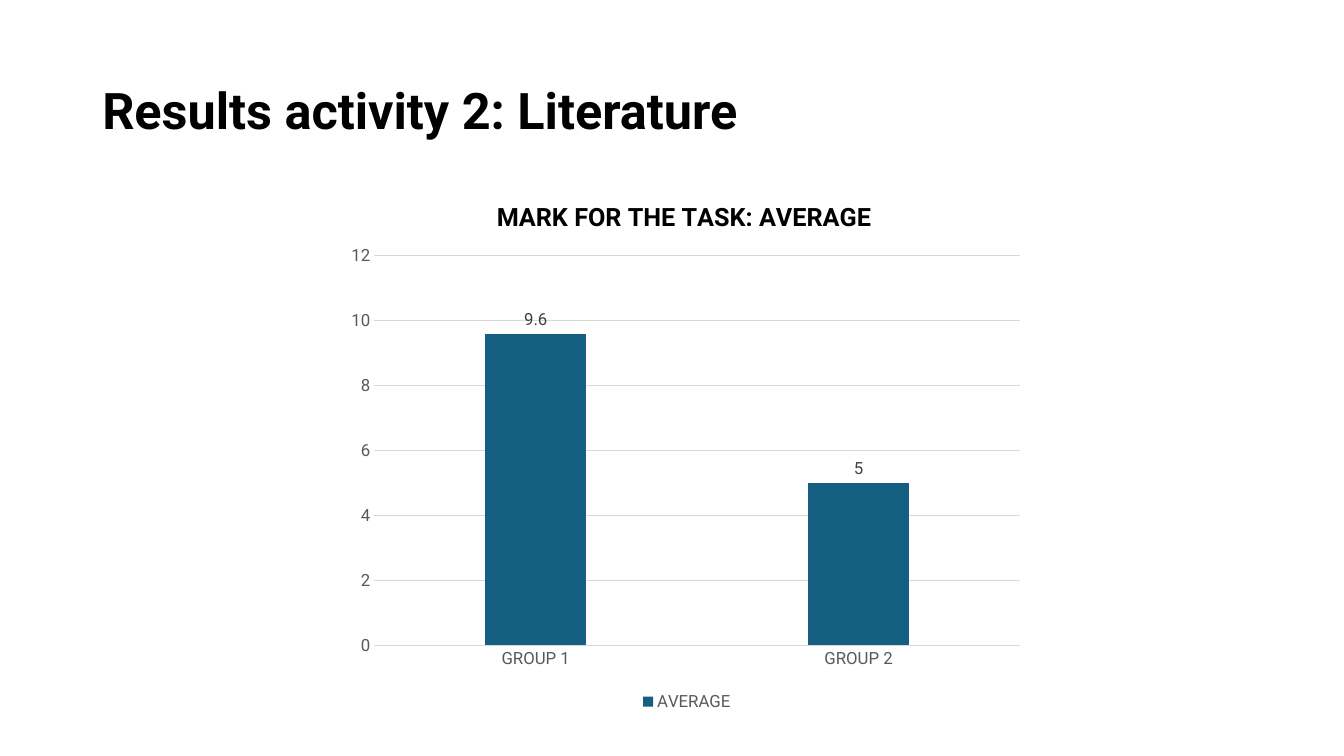
from dataclasses import dataclass
from lxml.etree import SubElement
from pptx import Presentation
from pptx.chart.data import CategoryChartData
from pptx.dml.color import RGBColor
from pptx.enum.chart import XL_CHART_TYPE, XL_LABEL_POSITION, XL_LEGEND_POSITION, XL_TICK_MARK
from pptx.enum.text import MSO_ANCHOR
from pptx.oxml.ns import qn
from pptx.util import Pt


@dataclass(frozen=True)
class Theme:
    font: str = "Roboto"
    ink: str = "000000"
    muted: str = "595959"
    label: str = "404040"
    grid: str = "D9D9D9"
    bar: str = "156082"
    title_size: float = 36
    chart_title_size: float = 18
    chart_size: float = 12


class Deck:
    def __init__(self, theme):
        self.t = theme
        self.prs = Presentation()
        self.prs.slide_width, self.prs.slide_height = Pt(960), Pt(540)
        self.s = self.prs.slides.add_slide(self.prs.slide_layouts[6])

    def style(self, font, size, color, bold=False):
        font.name, font.size, font.bold = self.t.font, Pt(size), bold
        font.color.rgb = RGBColor.from_string(color)

    def line(self, line):
        line.color.rgb = RGBColor.from_string(self.t.grid)
        line.width = Pt(0.75)

    def layout(self, element, **values):
        layout = element.find(qn("c:layout"))
        if layout is None:
            layout = SubElement(element, qn("c:layout"))
            tx = element.find(qn("c:tx"))
            element.insert(0 if tx is None else element.index(tx) + 1, layout)
        manual = SubElement(layout, qn("c:manualLayout"))
        if "w" in values:
            SubElement(manual, qn("c:layoutTarget")).set("val", "inner")
        for axis in "xy":
            SubElement(manual, qn(f"c:{axis}Mode")).set("val", "edge")
        for name, value in values.items():
            SubElement(manual, qn(f"c:{name}")).set("val", str(value))

    def title(self, text, x, y, w, h):
        tf = self.s.shapes.add_textbox(Pt(x), Pt(y), Pt(w), Pt(h)).text_frame
        tf.word_wrap = True
        tf.vertical_anchor = MSO_ANCHOR.MIDDLE
        p = tf.paragraphs[0]
        p.line_spacing = 0.9
        r = p.add_run()
        r.text = text
        self.style(r.font, self.t.title_size, self.t.ink, True)

    def columns(self, title, name, values, x, y, w, h):
        t = self.t
        data = CategoryChartData()
        data.categories = list(values)
        data.add_series(name, list(values.values()))
        frame = self.s.shapes.add_chart(
            XL_CHART_TYPE.COLUMN_CLUSTERED, Pt(x), Pt(y), Pt(w), Pt(h), data)
        chart = frame.chart
        self.style(chart.font, t.chart_size, t.muted)

        chart.has_title = True
        r = chart.chart_title.text_frame.paragraphs[0].add_run()
        r.text = title
        self.style(r.font, t.chart_title_size, t.ink, True)
        chart_xml = chart.element.find(qn("c:chart"))
        self.layout(chart_xml.find(qn("c:title")), x=0.22, y=0.04)
        self.layout(chart_xml.find(qn("c:plotArea")), x=0.05, y=0.15, w=0.93, h=0.72)

        chart.has_legend = True
        chart.legend.position = XL_LEGEND_POSITION.BOTTOM
        chart.legend.include_in_layout = False
        self.style(chart.legend.font, t.chart_size, t.muted)

        for axis in (chart.category_axis, chart.value_axis):
            axis.major_tick_mark = axis.minor_tick_mark = XL_TICK_MARK.NONE
            self.style(axis.tick_labels.font, t.chart_size, t.muted)
        self.line(chart.category_axis.format.line)
        axis = chart.value_axis
        axis.minimum_scale, axis.maximum_scale, axis.major_unit = 0, 12, 2
        axis.format.line.fill.background()
        self.line(axis.major_gridlines.format.line)

        plot = chart.plots[0]
        plot.gap_width, plot.overlap = 219, -27
        plot.vary_by_categories = False
        series = plot.series[0]
        series.format.fill.solid()
        series.format.fill.fore_color.rgb = RGBColor.from_string(t.bar)
        labels = series.data_labels
        labels.show_value = True
        labels.position = XL_LABEL_POSITION.OUTSIDE_END
        self.style(labels.font, t.chart_size, t.label)


def main():
    deck = Deck(Theme())
    deck.title("Results activity 2: Literature", 66, 28.8, 828, 104.4)
    deck.columns("MARK FOR THE TASK: AVERAGE", "AVERAGE",
                 {"GROUP 1": 9.6, "GROUP 2": 5}, 242.6, 124.6, 496, 386.6)
    deck.prs.save("out.pptx")


if __name__ == "__main__":
    main()
